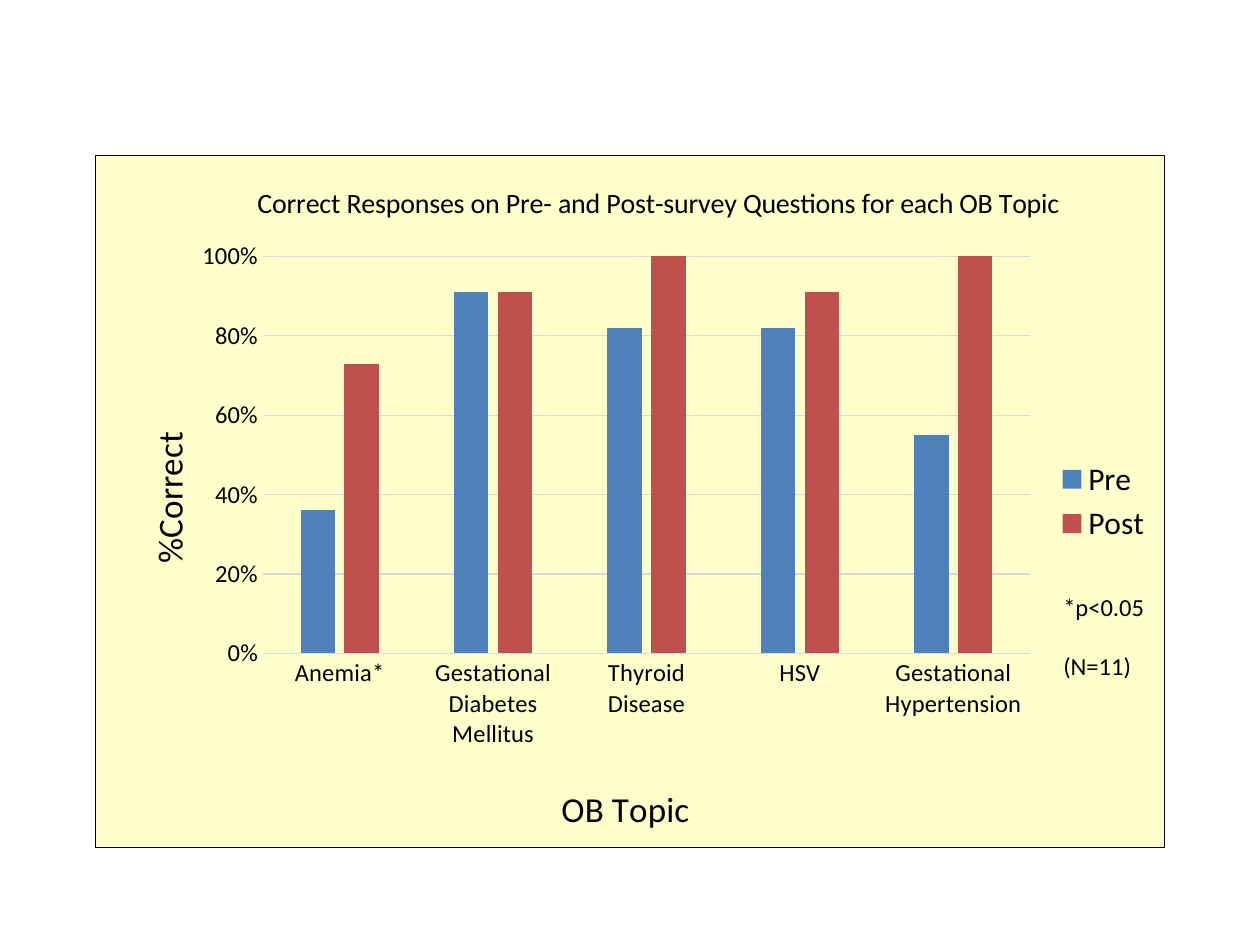
from lxml import etree
from pptx import Presentation
from pptx.chart.data import CategoryChartData
from pptx.dml.color import RGBColor
from pptx.enum.chart import XL_CHART_TYPE, XL_LEGEND_POSITION, XL_TICK_MARK
from pptx.enum.text import MSO_AUTO_SIZE
from pptx.oxml import parse_xml
from pptx.oxml.ns import nsdecls, qn
from pptx.util import Inches, Pt

COLUMNS = XL_CHART_TYPE.COLUMN_CLUSTERED
LEGEND_RIGHT = XL_LEGEND_POSITION.RIGHT
NO_TICK = XL_TICK_MARK.NONE
FIT_SHAPE = MSO_AUTO_SIZE.SHAPE_TO_FIT_TEXT

FONT = "Calibri"
BLACK, GRAY, CREAM = "000000", "D9D9D9", "FFFFCC"
TOPICS = ["Anemia*", "Gestational Diabetes Mellitus", "Thyroid Disease",
          "HSV", "Gestational Hypertension"]
SERIES = [
    ("Pre", "4F81BD", [0.36, 0.91, 0.82, 0.82, 0.55]),
    ("Post", "C0504D", [0.73, 0.91, 1, 0.91, 1]),
]


def rgb(color):
    return RGBColor.from_string(color)


def style_font(font, size):
    font.name = FONT
    font.size = Pt(size)
    font.bold = False
    font.color.rgb = rgb(BLACK)


def style_line(line, color):
    line.color.rgb = rgb(color)
    line.width = Pt(0.75)


def make_layout(x, y, w=None, h=None):
    """Return a manual chart layout in fractions of the chart's size."""
    layout = etree.Element(qn("c:layout"))
    manual = etree.SubElement(layout, qn("c:manualLayout"))
    values = [("xMode", "edge"), ("yMode", "edge"), ("x", x), ("y", y)]
    if w is not None:
        values = [("layoutTarget", "inner")] + values + [("w", w), ("h", h)]
    for tag, value in values:
        etree.SubElement(manual, qn(f"c:{tag}")).set("val", str(value))
    return layout


def set_title(owner, text, size, x, y):
    """Title a chart or an axis, placed at the given fractions."""
    owner.has_title = True
    title = owner.chart_title if hasattr(owner, "chart_title") else owner.axis_title
    p = title.text_frame.paragraphs[0]
    p.text = text
    style_font(p.font, size)
    element = title._element
    for old in element.findall(qn("c:layout")):
        element.remove(old)
    element.find(qn("c:tx")).addnext(make_layout(x, y))


def place_plot(chart, x, y, w, h):
    plot_area = chart._chartSpace.chart.plotArea
    for old in plot_area.findall(qn("c:layout")):
        plot_area.remove(old)
    plot_area.insert(0, make_layout(x, y, w, h))


def fill_chart_area(chart, fill, border):
    chart._chartSpace.chart.addnext(parse_xml(
        f'<c:spPr {nsdecls("c", "a")}>'
        f'<a:solidFill><a:srgbClr val="{fill}"/></a:solidFill>'
        f'<a:ln w="{Pt(0.75)}"><a:solidFill><a:srgbClr val="{border}"/>'
        '</a:solidFill></a:ln></c:spPr>'))


def style_axes(chart):
    topics, scale = chart.category_axis, chart.value_axis
    for axis in (topics, scale):
        axis.major_tick_mark = axis.minor_tick_mark = NO_TICK
        style_font(axis.tick_labels.font, 14)
    style_line(topics.format.line, GRAY)
    scale.format.line.fill.background()
    scale.minimum_scale, scale.maximum_scale, scale.major_unit = 0, 1, 0.2
    scale.has_major_gridlines = True
    style_line(scale.major_gridlines.format.line, GRAY)
    scale.tick_labels.number_format = "0%"
    scale.tick_labels.number_format_is_linked = False
    set_title(topics, "OB Topic", 20, 0.43, 0.9)
    set_title(scale, "%Correct", 20, 0.04, 0.39)


def add_survey_chart(s):
    data = CategoryChartData(number_format="0%")
    data.categories = TOPICS
    for name, _, values in SERIES:
        data.add_series(name, values)
    chart = s.shapes.add_chart(COLUMNS, Inches(0.75), Inches(1.23),
                               Inches(8.5), Inches(5.5), data).chart
    style_font(chart.font, 14)
    set_title(chart, "Correct Responses on Pre- and Post-survey Questions "
              "for each OB Topic", 16, 0.147, 0.033)
    style_axes(chart)

    plot = chart.plots[0]
    plot.gap_width, plot.overlap = 219, -27
    plot.vary_by_categories = False
    for series, (_, color, _) in zip(plot.series, SERIES):
        series.format.fill.solid()
        series.format.fill.fore_color.rgb = rgb(color)

    chart.has_legend = True
    chart.legend.position = LEGEND_RIGHT
    chart.legend.include_in_layout = False
    style_font(chart.legend.font, 18)
    place_plot(chart, 0.157, 0.146, 0.717, 0.574)
    fill_chart_area(chart, CREAM, BLACK)


def add_note(s, lines):
    tf = s.shapes.add_textbox(Inches(8.34), Inches(4.65),
                              Inches(0.92), Inches(0.81)).text_frame
    tf.word_wrap = True
    tf.auto_size = FIT_SHAPE
    for i, line in enumerate(lines):
        p = tf.add_paragraph() if i else tf.paragraphs[0]
        p.text = line
        style_font(p.font, 14)
        if i:
            p.space_before = Pt(17)


def main():
    prs = Presentation()
    prs.slide_width, prs.slide_height = Inches(10), Inches(7.5)
    s = prs.slides.add_slide(prs.slide_layouts[6])
    add_survey_chart(s)
    add_note(s, ["*p<0.05", "(N=11)"])
    prs.save("out.pptx")


if __name__ == "__main__":
    main()
